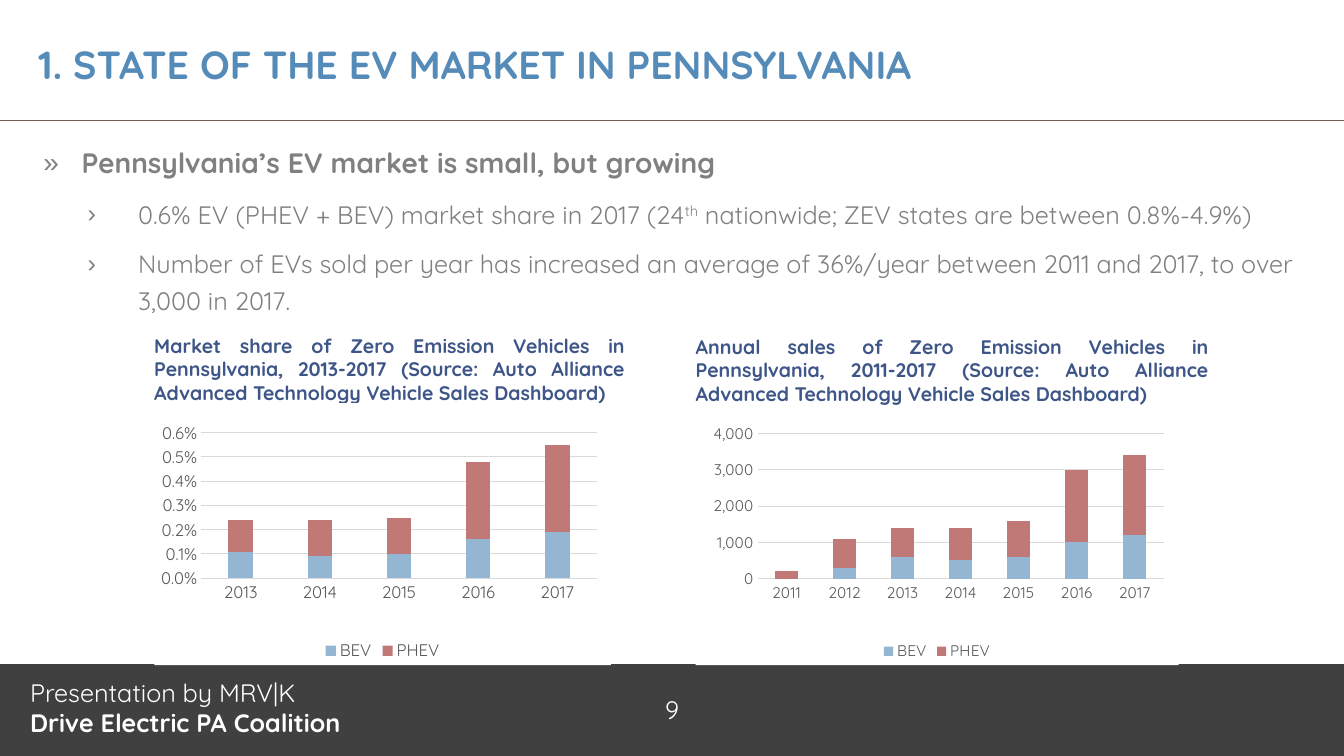
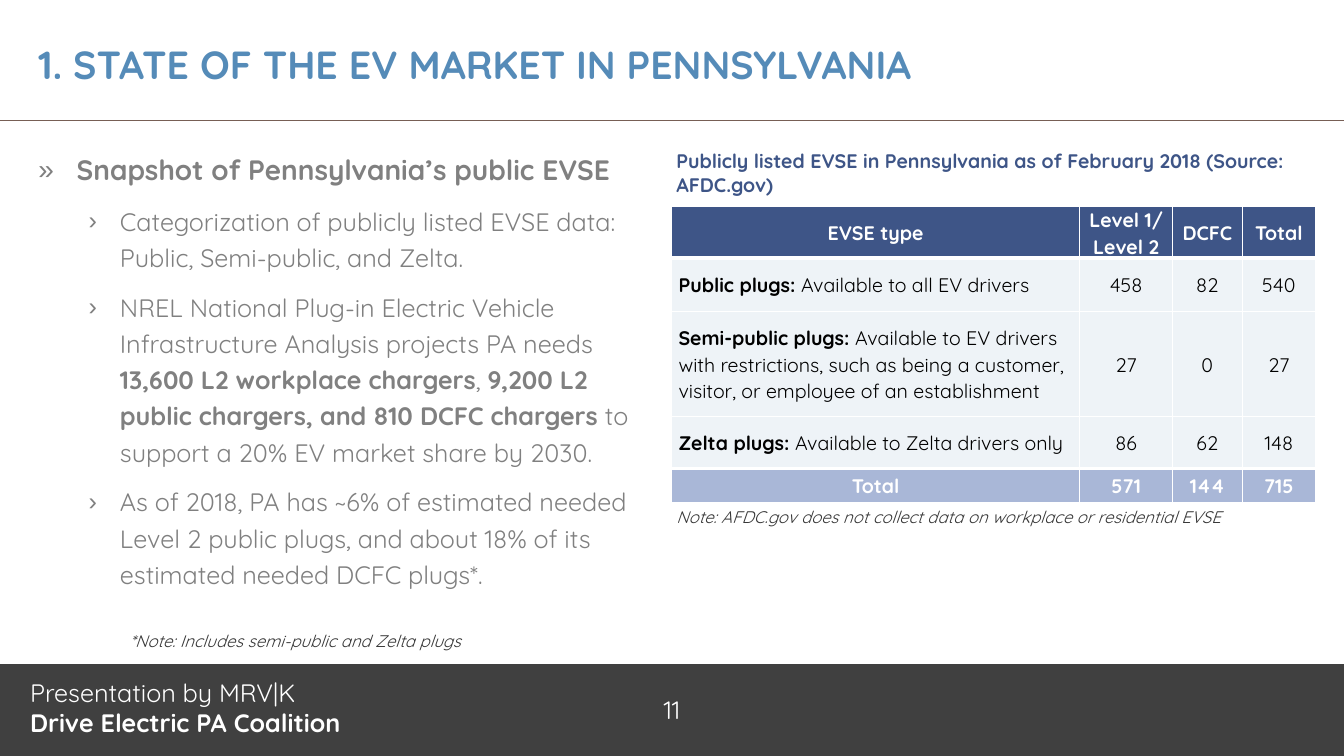
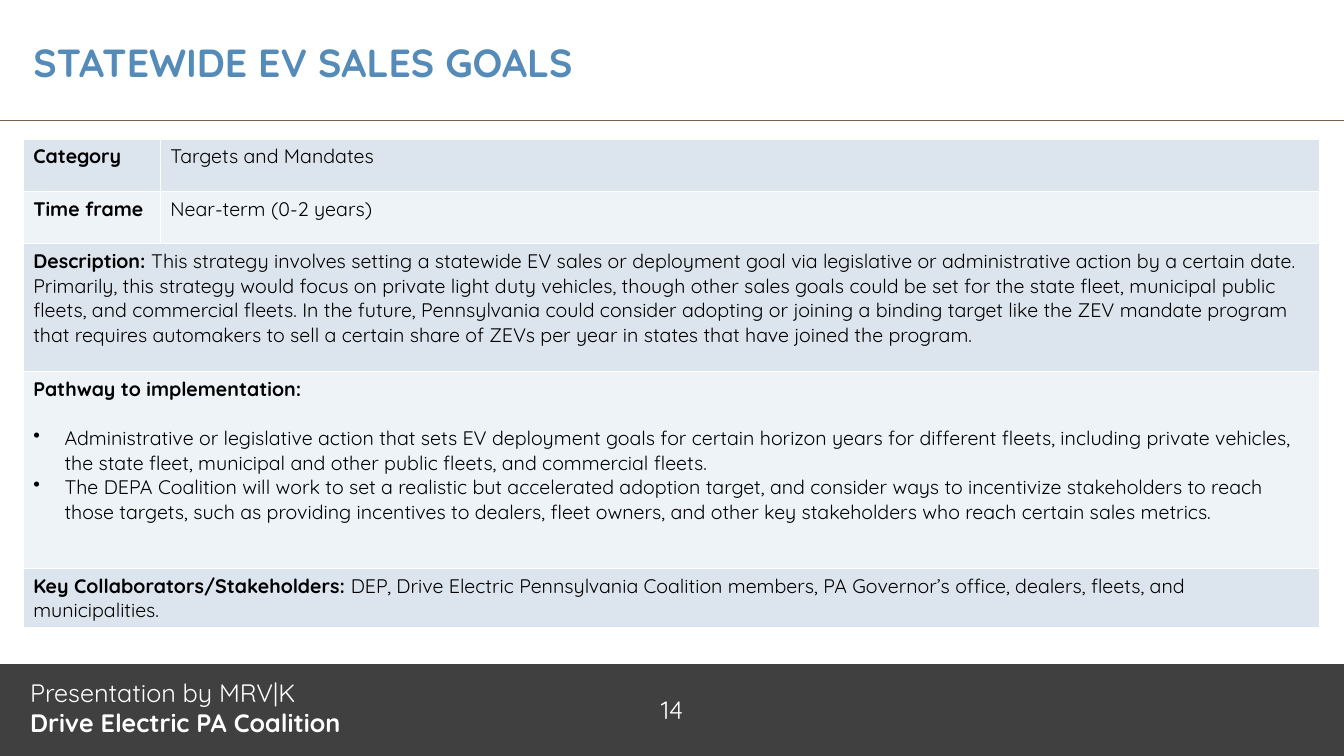
import pptx
import pptx.util
import pptx.chart.data
import pptx.dml.color
import pptx.enum.chart
import pptx.enum.shapes
import pptx.enum.text
import pptx.oxml
import pptx.oxml.ns
from lxml import etree

Inches, Pt = pptx.util.Inches, pptx.util.Pt
RGBColor = pptx.dml.color.RGBColor
ALIGN, ANCHOR = pptx.enum.text.PP_ALIGN, pptx.enum.text.MSO_ANCHOR
qn = pptx.oxml.ns.qn

FONT = "Quicksand"
WHITE = RGBColor(0xFF, 0xFF, 0xFF)
BLACK = RGBColor(0, 0, 0)
CHARCOAL = RGBColor(0x40, 0x40, 0x40)
BROWN = RGBColor(0x77, 0x5F, 0x55)
TITLE_BLUE = RGBColor(0x55, 0x8B, 0xB8)
NAVY = RGBColor(0x3E, 0x55, 0x87)
PERIWINKLE = RGBColor(0xA9, 0xB7, 0xD7)
BODY_GRAY = RGBColor(0x80, 0x80, 0x80)
NOTE_GRAY = RGBColor(0x36, 0x36, 0x36)
AXIS_GRAY = RGBColor(0x59, 0x59, 0x59)
GRID_GRAY = RGBColor(0xD9, 0xD9, 0xD9)
BAND_DARK = RGBColor(0xDC, 0xE5, 0xEE)
BAND_LIGHT = RGBColor(0xEE, 0xF3, 0xF7)
BEV_BLUE = RGBColor(0x94, 0xB6, 0xD2)
PHEV_RED = RGBColor(0xC1, 0x79, 0x78)


def write(p, text, size, color, italic=False, bullet=None, left=0, hang=0):
    """Fill a paragraph; parts between ** marks are bold, bullet is a character."""
    if bullet:
        pPr = p._p.get_or_add_pPr()
        pPr.set("marL", str(Inches(left)))
        pPr.set("indent", str(Inches(-hang)))
        etree.SubElement(pPr, qn("a:buChar")).set("char", bullet)
    for i, part in enumerate(text.split("**")):
        if part:
            r = p.add_run()
            r.text = part
            r.font.name, r.font.size = FONT, Pt(size)
            r.font.bold, r.font.italic = i % 2 == 1, italic
            r.font.color.rgb = color


def style_cell(cell, fill, top=1, bottom=1):
    """Give a cell white borders (widths in points) and a solid fill."""
    tcPr = cell._tc.get_or_add_tcPr()
    for side, width in (("L", 1), ("R", 1), ("T", top), ("B", bottom)):
        ln = etree.SubElement(tcPr, qn("a:ln" + side), w=str(Pt(width)))
        paint = etree.SubElement(ln, qn("a:solidFill"))
        etree.SubElement(paint, qn("a:srgbClr"), val=str(WHITE))
    cell.fill.solid()
    cell.fill.fore_color.rgb = fill


prs = pptx.Presentation()
prs.slide_width, prs.slide_height = Inches(13.33), Inches(7.5)

# Titles, rules and footer band
MARKET_TITLE = "1. STATE OF THE EV MARKET IN PENNSYLVANIA"
pages = [(1, MARKET_TITLE, "9", 0.28, 0.35),
         (1, MARKET_TITLE, "11", 0.28, 0.35),
         (5, "STATEWIDE EV SALES GOALS", "14", 0.23, 0.33)]
slides = []
for layout, title, number, left, top in pages:
    s = prs.slides.add_slide(prs.slide_layouts[layout])
    slides.append(s)

    band = s.shapes.add_shape(pptx.enum.shapes.MSO_SHAPE.RECTANGLE,
                              0, Inches(6.58), prs.slide_width, Inches(0.92))
    band.shadow.inherit = False
    band.fill.solid()
    band.fill.fore_color.rgb = CHARCOAL
    band.line.fill.background()
    band.text_frame.vertical_anchor = ANCHOR.MIDDLE
    p = band.text_frame.paragraphs[0]
    p.alignment = ALIGN.CENTER
    write(p, number, 18, WHITE)

    for y, color in ((6.58, WHITE), (1.2, BROWN)):
        rule = s.shapes.add_connector(pptx.enum.shapes.MSO_CONNECTOR.STRAIGHT,
                                      0, Inches(y), prs.slide_width, Inches(y))
        rule.line.color.rgb = color
        rule.line.width = Pt(0.75)
        etree.SubElement(rule._element.spPr, qn("a:effectLst"))

    footer = s.shapes.add_textbox(Inches(0.2), Inches(6.67), Inches(4.89), Inches(0.75))
    tf = footer.text_frame
    tf.word_wrap = True
    write(tf.paragraphs[0], "Presentation by MRV|K", 18, WHITE)
    write(tf.add_paragraph(), "**Drive Electric PA Coalition**", 18, WHITE)

    sp = s.shapes.title
    sp.left, sp.top, sp.width, sp.height = map(Inches, (left, top, 12.67, 0.87))
    tf = sp.text_frame
    tf.auto_size = pptx.enum.text.MSO_AUTO_SIZE.NONE
    tf.vertical_anchor = ANCHOR.TOP
    tf.paragraphs[0].alignment = ALIGN.LEFT
    write(tf.paragraphs[0], f"**{title}**", 28, TITLE_BLUE)

share_slide, evse_slide, goals_slide = slides

# Bulleted lists: a bold heading, then second-level points
lists = [
    (share_slide, (0.33, 1.33, 12.81, 1.86), 0.94, 0.5, [
        "**Pennsylvania’s EV market is small, but growing**",
        "0.6% EV (PHEV + BEV) market share in 2017 (24**th** nationwide; "
        "ZEV states are between 0.8%-4.9%)",
        "Number of EVs sold per year has increased an average of 36%/year "
        "between 2011 and 2017, to over 3,000 in 2017."]),
    (evse_slide, (0.28, 1.4, 6.17, 1.86), 0.81, 0.31, [
        "**Snapshot of Pennsylvania’s public EVSE**",
        "Categorization of publicly listed EVSE data: Public, Semi-public, and Zelta.",
        "NREL National Plug-in Electric Vehicle Infrastructure Analysis projects PA needs "
        "**13,600 L2 workplace chargers**, **9,200 L2 public chargers, and 810 DCFC "
        "chargers **to support a 20% EV market share by 2030.",
        "As of 2018, PA has ~6% of estimated needed Level 2 public plugs, and about 18% "
        "of its estimated needed DCFC plugs*."]),
]
for s, box, left, hang, items in lists:
    sp = s.placeholders[1]
    sp.left, sp.top, sp.width, sp.height = map(Inches, box)
    tf = sp.text_frame
    tf.auto_size = pptx.enum.text.MSO_AUTO_SIZE.NONE
    for i, item in enumerate(items):
        if i == 0:
            p = tf.paragraphs[0]
            write(p, item, 20, BODY_GRAY, bullet="»", left=0.38, hang=0.38)
        else:
            p = tf.add_paragraph()
            p.level = 1
            write(p, item, 18, BODY_GRAY, bullet="›", left=left, hang=hang)
        p.line_spacing = 1.2
        p.space_before = Pt(3.6 if i else 0)
        p.space_after = Pt(6)

ordinal = share_slide.placeholders[1].text_frame.paragraphs[1].runs[1]
ordinal.font.bold = False
ordinal._r.get_or_add_rPr().set("baseline", "30000")

# Captions and notes
DASHBOARD = "(Source: Auto Alliance Advanced Technology Vehicle Sales Dashboard)"
captions = [
    (share_slide, (1.53, 3.31, 4.67, 0.68), True,
     f"Market share of Zero Emission Vehicles in Pennsylvania, 2013-2017 {DASHBOARD}"),
    (share_slide, (6.9, 3.32, 5.09, 0.61), True,
     f"Annual sales of Zero Emission Vehicles in Pennsylvania, 2011-2017 {DASHBOARD}"),
    (evse_slide, (6.61, 1.43, 6.66, 0.57), False,
     "Publicly listed EVSE in Pennsylvania as of February 2018 (Source: AFDC.gov)"),
    (evse_slide, (1.19, 6.21, 3.72, 0.3), False,
     "*Note: Includes semi-public and Zelta plugs"),
    (evse_slide, (6.61, 4.98, 6.44, 0.3), False,
     "Note: AFDC.gov does not collect data on workplace or residential EVSE"),
]
for s, box, chart_caption, text in captions:
    tf = s.shapes.add_textbox(*map(Inches, box)).text_frame
    tf.word_wrap = True
    p = tf.paragraphs[0]
    if chart_caption:
        tf.margin_left = tf.margin_right = tf.margin_top = tf.margin_bottom = 0
        p.alignment = ALIGN.JUSTIFY
    if "Note:" in text:
        write(p, text, 12, NOTE_GRAY, italic=True)
    else:
        write(p, f"**{text}**", 14, NAVY)

# Stacked column charts
charts = [
    ((1.53, 4, 4.53, 2.6), 12, "0.0%", 0.006, 0.001, 219, (0.103, 0.113, 0.866, 0.555),
     2013, [0.0011, 0.0009, 0.001, 0.0016, 0.0019],
     [0.0013, 0.0015, 0.0015, 0.0032, 0.0036]),
    ((6.9, 4.14, 4.79, 2.46), 11, "#,##0", 4000, 1000, 150, (0.128, 0.065, 0.841, 0.586),
     2011, [0, 300, 600, 500, 600, 1000, 1200],
     [200, 800, 800, 900, 1000, 2000, 2200]),
]
for box, size, fmt, top, step, gap, plot_box, first_year, bev, phev in charts:
    data = pptx.chart.data.CategoryChartData(number_format=fmt)
    data.categories = [str(first_year + i) for i in range(len(bev))]
    data.add_series("BEV", bev)
    data.add_series("PHEV", phev)
    chart = share_slide.shapes.add_chart(
        pptx.enum.chart.XL_CHART_TYPE.COLUMN_STACKED, *map(Inches, box), data).chart
    chart.has_title = False
    chart.font.name, chart.font.size = FONT, Pt(size)
    chart.font.color.rgb = AXIS_GRAY
    chart.has_legend = True
    chart.legend.position = pptx.enum.chart.XL_LEGEND_POSITION.BOTTOM
    chart.legend.include_in_layout = False

    plot = chart.plots[0]
    plot.gap_width, plot.overlap = gap, 100
    plot.vary_by_categories = False
    for series, color in zip(plot.series, (BEV_BLUE, PHEV_RED)):
        series.format.fill.solid()
        series.format.fill.fore_color.rgb = color

    values, years = chart.value_axis, chart.category_axis
    values.minimum_scale, values.maximum_scale, values.major_unit = 0, top, step
    values.tick_labels.number_format = fmt
    values.tick_labels.number_format_is_linked = False
    values.format.line.fill.background()
    for axis in (values, years):
        axis.major_tick_mark = pptx.enum.chart.XL_TICK_MARK.NONE
    for line in (values.major_gridlines.format.line, years.format.line):
        line.color.rgb = GRID_GRAY
        line.width = Pt(0.75)

    area = chart.element.find(".//" + qn("c:plotArea"))
    for old in area.findall(qn("c:layout")):
        area.remove(old)
    layout = etree.Element(qn("c:layout"))
    area.insert(0, layout)
    manual = etree.SubElement(layout, qn("c:manualLayout"))
    settings = [("layoutTarget", "inner"), ("xMode", "edge"), ("yMode", "edge")]
    for tag, val in settings + list(zip("xywh", plot_box)):
        etree.SubElement(manual, qn("c:" + tag)).set("val", str(val))
    spPr = etree.Element(qn("c:spPr"))
    chart.element.find(qn("c:chart")).addnext(spPr)
    paint = etree.SubElement(spPr, qn("a:solidFill"))
    etree.SubElement(paint, qn("a:srgbClr"), val=str(WHITE))

# Tables
evse_rows = [
    ["**EVSE type**", "**Level 1/ Level 2**", "**DCFC**", "**Total**"],
    ["**Public plugs: **Available to all EV drivers", "458", "82", "540"],
    ["**Semi-public plugs: **Available to EV drivers with restrictions, such as being a "
     "customer, visitor, or employee of an establishment", "27", "0", "27"],
    ["**Zelta plugs: **Available to Zelta drivers only", "86", "62", "148"],
    ["**Total**", "**571**", "**144**", "**715**"],
]
goal_rows = [
    ["**Category**", "Targets and Mandates"],
    ["**Time frame**", "Near-term (0-2 years)"],
    ["**Description: **This strategy involves setting a statewide EV sales or deployment "
     "goal via legislative or administrative action by a certain date. Primarily, this "
     "strategy would focus on private light duty vehicles, though other sales goals could "
     "be set for the state fleet, municipal public fleets, and commercial fleets. In the "
     "future, Pennsylvania could consider adopting or joining a binding target like the "
     "ZEV mandate program that requires automakers to sell a certain share of ZEVs per "
     "year in states that have joined the program."],
    ["**Pathway to implementation:**"],
    ["**Key Collaborators/Stakeholders: **DEP, Drive Electric Pennsylvania Coalition "
     "members, PA Governor’s office, dealers, fleets, and municipalities."],
]
pathway_steps = [
    "Administrative or legislative action that sets EV deployment goals for certain horizon "
    "years for different fleets, including private vehicles, the state fleet, municipal and "
    "other public fleets, and commercial fleets.",
    "The DEPA Coalition will work to set a realistic but accelerated adoption target, and "
    "consider ways to incentivize stakeholders to reach those targets, such as providing "
    "incentives to dealers, fleet owners, and other key stakeholders who reach certain "
    "sales metrics.",
]
tables = []
for s, left, top, widths, heights in (
        (evse_slide, 6.66, 2.05, (4.05, 0.92, 0.69, 0.73), (0.51, 0.53, 1.04, 0.52, 0.34)),
        (goals_slide, 0.23, 1.38, (1.36, 11.5), (0.52, 0.52, 1.27, 1.95, 0.59))):
    table = s.shapes.add_table(len(heights), len(widths), Inches(left), Inches(top),
                               Inches(sum(widths)), Inches(sum(heights))).table
    table.first_row = table.horz_banding = False
    for column, width in zip(table.columns, widths):
        column.width = Inches(width)
    for row, height in zip(table.rows, heights):
        row.height = Inches(height)
    tables.append(table)
evse_table, goals_table = tables

for i, row in enumerate(evse_rows):
    header, total = i == 0, i == len(evse_rows) - 1
    fill = NAVY if header else PERIWINKLE if total else BAND_LIGHT
    for j, text in enumerate(row):
        cell = evse_table.cell(i, j)
        style_cell(cell, fill, top=3 if total else 1, bottom=3 if header else 1)
        cell.vertical_anchor = ANCHOR.MIDDLE
        cell.margin_left = cell.margin_right = Inches(0.07)
        cell.margin_top = cell.margin_bottom = 0
        p = cell.text_frame.paragraphs[0]
        p.line_spacing = 1.07
        p.alignment = ALIGN.CENTER if header or total or j else ALIGN.LEFT
        write(p, text, 14, WHITE if header or total else BLACK)

for i, row in enumerate(goal_rows):
    for j in range(2):
        style_cell(goals_table.cell(i, j), BAND_LIGHT if i % 2 else BAND_DARK)
    if len(row) == 1:
        goals_table.cell(i, 0).merge(goals_table.cell(i, 1))
    for j, text in enumerate(row):
        write(goals_table.cell(i, j).text_frame.paragraphs[0], text, 14, BLACK)

pathway = goals_table.cell(3, 0).text_frame
for i, step in enumerate(pathway_steps):
    p = pathway.add_paragraph()
    write(p, step, 14, BLACK, bullet="•", left=0.31, hang=0.31)
    p.space_before = Pt(0 if i else 17.5)

prs.save("out.pptx")
